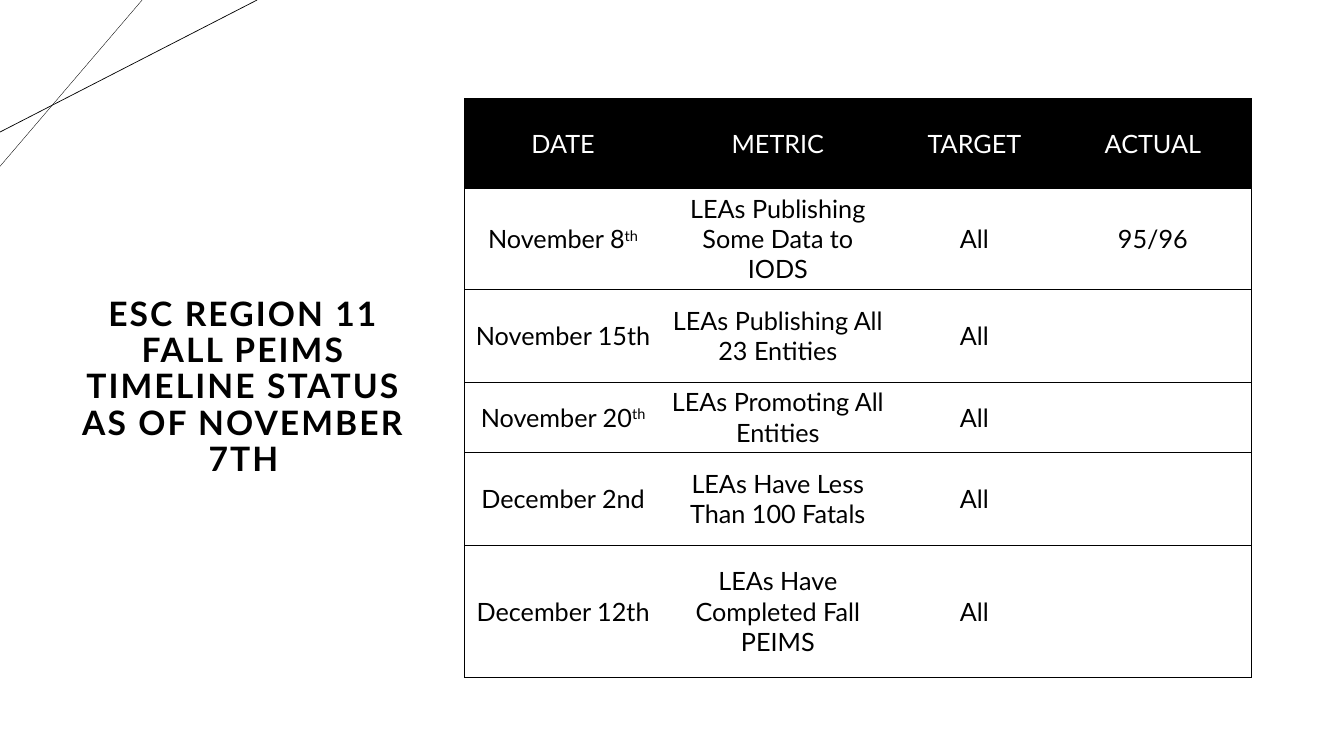
import lxml.etree
import pptx
import pptx.dml.color
import pptx.enum.shapes
import pptx.enum.text
import pptx.oxml.ns
import pptx.util

Inches = pptx.util.Inches
Pt = pptx.util.Pt
qn = pptx.oxml.ns.qn

COLORS = {"ink": "000000", "paper": "FFFFFF"}
FONT = "Lato"
TITLE_LINES = ["ESC REGION 11 FALL PEIMS TIMELINE STATUS", "AS OF NOVEMBER 7TH"]
HEADERS = ["DATE", "METRIC", "TARGET", "ACTUAL"]
MILESTONES = [
    ("November 8", "th", "LEAs Publishing Some Data to IODS", "All", "95/96"),
    ("November 15th", "", "LEAs Publishing All 23 Entities", "All", ""),
    ("November 20", "th", "LEAs Promoting All Entities", "All", ""),
    ("December 2nd", "", "LEAs Have Less Than 100 Fatals", "All", ""),
    ("December 12th", "", "LEAs Have Completed Fall PEIMS", "All", ""),
]
COL_WIDTHS = [1.95, 2.31, 1.59, 1.95]
ROW_HEIGHTS = [0.89, 0.92, 0.92, 0.64, 0.92, 1.31]


def rgb(name):
    return pptx.dml.color.RGBColor.from_string(COLORS[name])


def add_run(p, text, size, color, bold=False, **attrs):
    r = p.add_run()
    r.text = text
    r.font.name = FONT
    r.font.size = Pt(size)
    r.font.bold = bold
    r.font.color.rgb = rgb(color)
    for key, value in attrs.items():
        r.font._element.set(key, value)


def add_corner_lines(s, left, top):
    for across, down, weight in [(1.41, 1.65, 0.25), (2.55, 1.31, 0.5)]:
        line = s.shapes.add_connector(
            pptx.enum.shapes.MSO_CONNECTOR.STRAIGHT,
            Inches(left + across), Inches(top), Inches(left), Inches(top + down))
        line.line.color.rgb = rgb("ink")
        line.line.width = Pt(weight)
        lxml.etree.SubElement(line._element.spPr, qn("a:effectLst"))


def add_title(s, left, top, width, height):
    sp = s.shapes.add_textbox(Inches(left), Inches(top), Inches(width), Inches(height))
    tf = sp.text_frame
    tf.word_wrap = True
    tf.vertical_anchor = pptx.enum.text.MSO_ANCHOR.MIDDLE
    p = tf.paragraphs[0]
    p.alignment = pptx.enum.text.PP_ALIGN.CENTER
    p.line_spacing = 0.9
    for i, text in enumerate(TITLE_LINES):
        if i:
            p.add_line_break()
        add_run(p, text, 24, "ink", bold=True, spc="150")


def set_borders(cell, visible):
    tcPr = cell._tc.get_or_add_tcPr()
    for side in "LRTB":
        ln = lxml.etree.SubElement(tcPr, qn("a:ln" + side), w=str(Pt(0.5)))
        if side in visible:
            fill = lxml.etree.SubElement(ln, qn("a:solidFill"))
            lxml.etree.SubElement(fill, qn("a:srgbClr"), val=COLORS["ink"])
        else:
            lxml.etree.SubElement(ln, qn("a:noFill"))


def fill_cell(cell, text, color, suffix=""):
    cell.vertical_anchor = pptx.enum.text.MSO_ANCHOR.MIDDLE
    p = cell.text_frame.paragraphs[0]
    p.alignment = pptx.enum.text.PP_ALIGN.CENTER
    if text:
        add_run(p, text, 18, color)
    if suffix:
        add_run(p, suffix, 18, color, baseline="30000")


def add_timeline(s, left, top, width, height):
    table = s.shapes.add_table(
        len(ROW_HEIGHTS), len(COL_WIDTHS),
        Inches(left), Inches(top), Inches(width), Inches(height)).table
    table.first_row = False
    table.horz_banding = False
    for column, col_width in zip(table.columns, COL_WIDTHS):
        column.width = Inches(col_width)
    for row, row_height in zip(table.rows, ROW_HEIGHTS):
        row.height = Inches(row_height)

    last = len(COL_WIDTHS) - 1
    for i, row in enumerate(table.rows):
        for j, cell in enumerate(row.cells):
            set_borders(cell, "TB" + ("L" if j == 0 else "") + ("R" if j == last else ""))
            if i == 0:
                cell.fill.solid()
                cell.fill.fore_color.rgb = rgb("ink")
                fill_cell(cell, HEADERS[j], "paper")
            else:
                cell.fill.background()
                date, suffix, *rest = MILESTONES[i - 1]
                fill_cell(cell, [date, *rest][j], "ink", suffix if j == 0 else "")


def main():
    prs = pptx.Presentation()
    prs.slide_width = Inches(13.33)
    prs.slide_height = Inches(7.5)
    s = prs.slides.add_slide(prs.slide_layouts[6])
    s.background.fill.solid()
    s.background.fill.fore_color.rgb = rgb("paper")
    add_corner_lines(s, 0, 0)
    add_title(s, 0.64, 2.8, 3.55, 2.1)
    add_timeline(s, 4.61, 0.98, 7.81, 5.65)
    prs.save("out.pptx")


if __name__ == "__main__":
    main()
